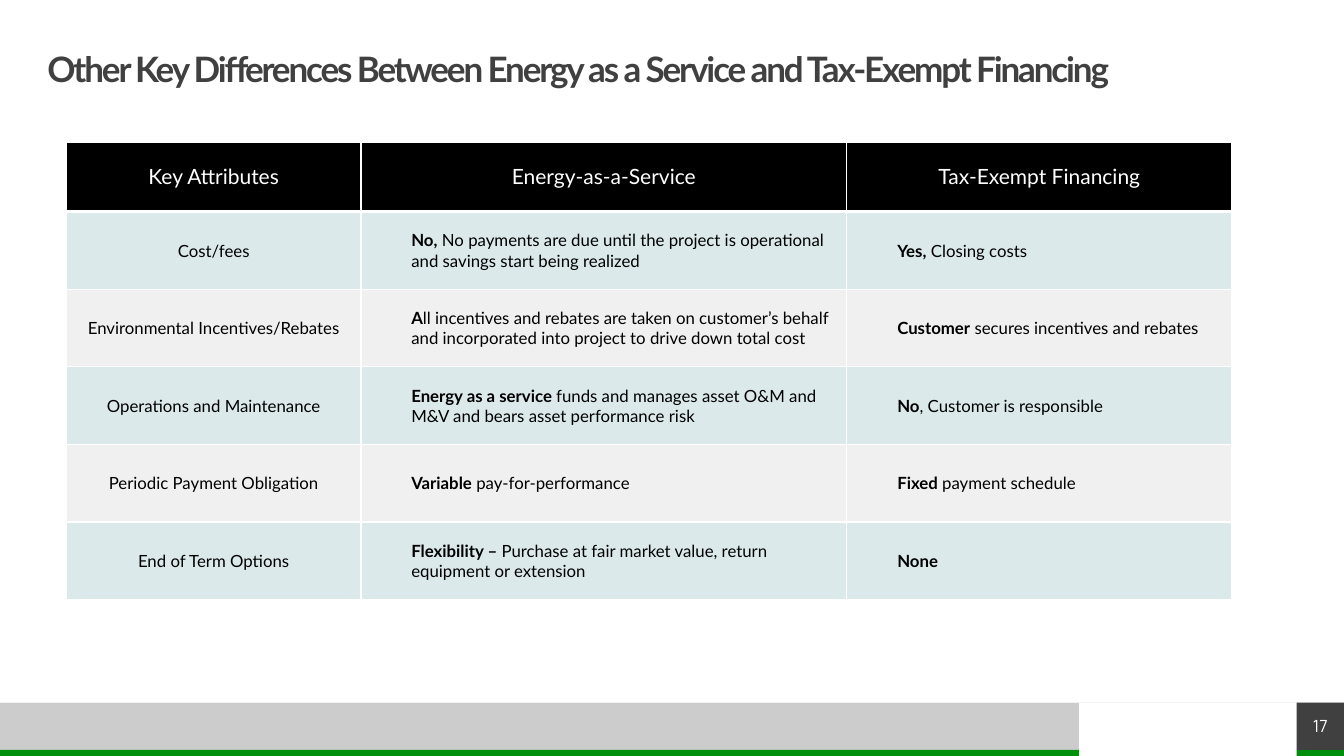
from lxml.etree import SubElement
from pptx import Presentation
from pptx.dml.color import RGBColor
from pptx.enum.shapes import MSO_CONNECTOR, MSO_SHAPE
from pptx.enum.text import MSO_ANCHOR, MSO_AUTO_SIZE, PP_ALIGN
from pptx.oxml.ns import qn
from pptx.util import Inches, Pt

TITLE = "Other Key Differences Between Energy as a Service and Tax-Exempt Financing"
PAGE_NUMBER = "17"
HEADINGS = ["Key Attributes", "Energy-as-a-Service", "Tax-Exempt Financing"]
# Attribute, then (bold lead, rest) for each kind of financing
ATTRIBUTES = [
    ("Cost/fees",
     ("No,", " No payments are due until the project is operational and savings start being realized"),
     ("Yes,", " Closing costs")),
    ("Environmental Incentives/Rebates",
     ("A", "ll incentives and rebates are taken on customer’s behalf and incorporated into project "
           "to drive down total cost"),
     ("Customer", " secures incentives and rebates")),
    ("Operations and Maintenance",
     ("Energy as a service ", "funds and manages asset O&M and M&V and bears asset performance risk"),
     ("No", ", Customer is responsible")),
    ("Periodic Payment Obligation",
     ("Variable", " pay-for-performance"),
     ("Fixed", " payment schedule")),
    ("End of Term Options",
     ("Flexibility – ", "Purchase at fair market value, return equipment or extension"),
     ("None", "")),
]

FONT, NUMBER_FONT = "Lato", "Manrope"
BLACK = RGBColor(0x00, 0x00, 0x00)
WHITE = RGBColor(0xFF, 0xFF, 0xFF)
DARK = RGBColor(0x40, 0x40, 0x40)
GRAY = RGBColor(0xCC, 0xCC, 0xCC)
PALE_GRAY = RGBColor(0xF2, 0xF2, 0xF2)
GREEN = RGBColor(0x00, 0x8F, 0x0D)
ROW_FILLS = [RGBColor(0xDC, 0xE9, 0xEB), RGBColor(0xF0, 0xF0, 0xF0)]

WIDTH, HEIGHT = 13.33, 7.5
FOOTER_TOP, FOOTER_HEIGHT, STRIPE_HEIGHT = 6.97, 0.47, 0.06
STRIPE_TOP = FOOTER_TOP + FOOTER_HEIGHT
BAND_WIDTH, NUMBER_WIDTH = 10.7, 0.47
NUMBER_LEFT = WIDTH - NUMBER_WIDTH
COLUMN_WIDTHS = [2.92, 4.82, 3.82]
HEADER_HEIGHT, ROW_HEIGHT = 0.69, 0.77
ANSWER_INDENT = 0.5

presentation = Presentation()
presentation.slide_width = Inches(WIDTH)
presentation.slide_height = Inches(HEIGHT)
slide = presentation.slides.add_slide(presentation.slide_layouts[5])


def style(font, name, size, color, bold=False):
    font.name, font.size, font.bold = name, Pt(size), bold
    font.color.rgb = color


def clear_margins(frame):
    frame.margin_left = frame.margin_right = frame.margin_top = frame.margin_bottom = 0


def add_block(left, top, width, height, color):
    block = slide.shapes.add_shape(
        MSO_SHAPE.RECTANGLE, Inches(left), Inches(top), Inches(width), Inches(height))
    block.shadow.inherit = False
    block.fill.solid()
    block.fill.fore_color.rgb = color
    block.line.fill.background()
    return block


def add_borders(cell, top, bottom):
    properties = cell._tc.get_or_add_tcPr()
    for side, points in (("lnL", 1), ("lnR", 1), ("lnT", top), ("lnB", bottom)):
        border = SubElement(properties, qn(f"a:{side}"), w=str(Pt(points)))
        SubElement(SubElement(border, qn("a:solidFill")), qn("a:srgbClr"), val=str(WHITE))


# Footer band, stripes and hairline
add_block(0, FOOTER_TOP, BAND_WIDTH, FOOTER_HEIGHT, GRAY)
for left, width in ((0, BAND_WIDTH), (NUMBER_LEFT, NUMBER_WIDTH)):
    add_block(left, STRIPE_TOP, width, STRIPE_HEIGHT, GREEN)
hairline = slide.shapes.add_connector(
    MSO_CONNECTOR.STRAIGHT, Inches(WIDTH), Inches(FOOTER_TOP), 0, Inches(FOOTER_TOP))
hairline.line.color.rgb = PALE_GRAY
hairline.line.width = Pt(0.5)
SubElement(hairline._element.spPr, qn("a:effectLst"))

# Title
title = slide.shapes.title
title.left, title.top, title.width, title.height = map(Inches, (0.47, 0.47, 12.4, 0.47))
title_frame = title.text_frame
title_frame.text = TITLE
title_frame.auto_size = MSO_AUTO_SIZE.NONE
title_frame.word_wrap = True
title_frame.vertical_anchor = MSO_ANCHOR.MIDDLE
clear_margins(title_frame)
title_line = title_frame.paragraphs[0]
title_line.alignment = PP_ALIGN.LEFT
title_line.line_spacing = 0.9
style(title_line.runs[0].font, FONT, 25, DARK, bold=True)
title_line.runs[0].font._element.set("spc", "-150")

# Page number
number_frame = add_block(NUMBER_LEFT, FOOTER_TOP, NUMBER_WIDTH, FOOTER_HEIGHT, DARK).text_frame
number_frame.text = PAGE_NUMBER
number_frame.vertical_anchor = MSO_ANCHOR.MIDDLE
clear_margins(number_frame)
number_frame.paragraphs[0].alignment = PP_ALIGN.CENTER
style(number_frame.paragraphs[0].runs[0].font, NUMBER_FONT, 12, WHITE)

# Comparison table
row_heights = [HEADER_HEIGHT] + [ROW_HEIGHT] * len(ATTRIBUTES)
comparison = slide.shapes.add_table(
    len(row_heights), len(HEADINGS), Inches(0.66), Inches(1.41),
    Inches(sum(COLUMN_WIDTHS)), Inches(sum(row_heights))).table
for column, width in zip(comparison.columns, COLUMN_WIDTHS):
    column.width = Inches(width)
for row, height in zip(comparison.rows, row_heights):
    row.height = Inches(height)

for r, contents in enumerate([HEADINGS] + ATTRIBUTES):
    is_header = r == 0
    for c, content in enumerate(contents):
        cell = comparison.cell(r, c)
        add_borders(cell, top=3 if r == 1 else 1, bottom=3 if is_header else 1)
        cell.fill.solid()
        cell.fill.fore_color.rgb = BLACK if is_header else ROW_FILLS[(r - 1) % 2]
        cell.vertical_anchor = MSO_ANCHOR.MIDDLE
        paragraph = cell.text_frame.paragraphs[0]
        if not is_header:
            clear_margins(cell)
        if is_header or c == 0:
            paragraph.text = content
            paragraph.alignment = PP_ALIGN.CENTER
            style(paragraph.runs[0].font, FONT, 15 if is_header else 12,
                  WHITE if is_header else BLACK)
        else:
            paragraph.level = 1
            paragraph.alignment = PP_ALIGN.LEFT
            indent = paragraph._p.get_or_add_pPr()
            indent.set("marL", str(Inches(ANSWER_INDENT)))
            indent.set("indent", "0")
            for part, bold in zip(content, (True, False)):
                if part:
                    run = paragraph.add_run()
                    run.text = part
                    style(run.font, FONT, 12, BLACK, bold)

presentation.save("out.pptx")
